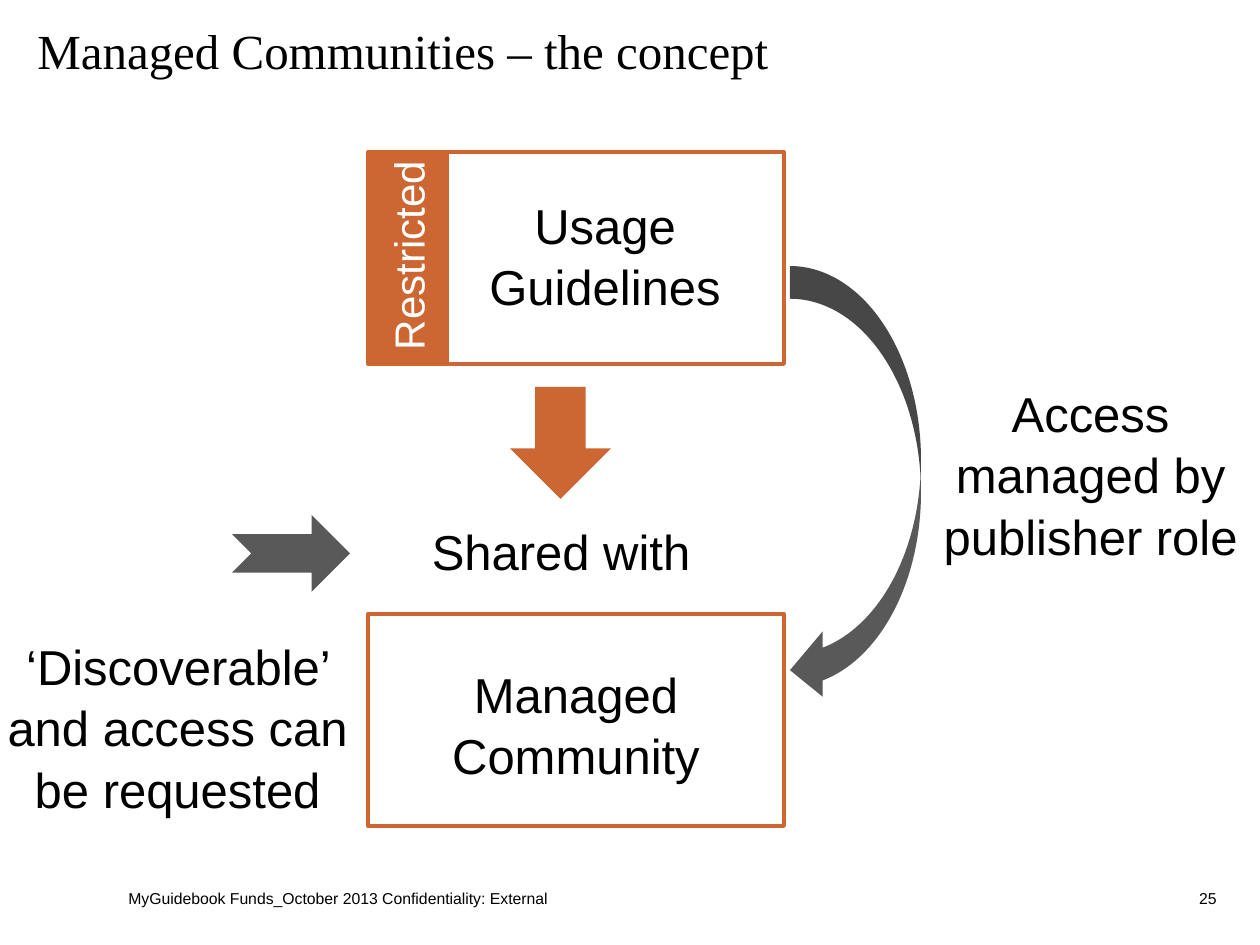
from dataclasses import dataclass

from pptx import Presentation
from pptx.dml.color import RGBColor as Rgb
from pptx.enum.shapes import MSO_SHAPE as Geo
from pptx.enum.text import MSO_ANCHOR as Anchor, PP_ALIGN as Align
from pptx.util import Emu, Pt

SCALE = 914400 / 126


@dataclass(frozen=True)
class Theme:
    ink: Rgb = Rgb(0, 0, 0)
    white: Rgb = Rgb(255, 255, 255)
    rust: Rgb = Rgb(0xCC, 0x66, 0x33)
    grey: Rgb = Rgb(0x59, 0x59, 0x59)
    sans: str = "Arial"
    serif: str = "Times New Roman"
    big: int = 28
    tab: int = 24
    small: int = 9
    edge: float = 2.25
    lead: float = 1.05


T = Theme()


def px(num):
    return Emu(round(num * SCALE))


def block(slide, geo, area, fill, edge=None):
    shape = slide.shapes.add_shape(geo, *map(px, area))
    shape.shadow.inherit = False
    shape.fill.solid()
    shape.fill.fore_color.rgb = fill
    if edge is None:
        shape.line.fill.background()
    else:
        shape.line.color.rgb = edge
        shape.line.width = Pt(T.edge)


def label(slide, text, area, size=T.big, color=T.ink, face=T.sans,
          align=Align.CENTER, anchor=Anchor.TOP, wrap=True, lead=T.lead, turn=0):
    box = slide.shapes.add_textbox(*map(px, area))
    box.rotation = turn
    frame = box.text_frame
    frame.word_wrap = wrap
    frame.vertical_anchor = anchor
    frame.text = text
    para = frame.paragraphs[0]
    para.alignment = align
    para.line_spacing = lead
    font = para.runs[0].font
    font.size, font.name = Pt(size), face
    font.color.rgb = color


def footer(slide, text, area, align):
    label(slide, text, area, size=T.small, align=align,
          anchor=Anchor.MIDDLE, lead=1.0)


def main():
    deck = Presentation()
    deck.slide_width, deck.slide_height = px(1260), px(945)
    slide = deck.slides.add_slide(deck.slide_layouts[6])

    label(slide, "Managed Communities – the concept", (25, 14, 1218, 77),
          face=T.serif, align=Align.LEFT, wrap=False, lead=1.0)

    for top in (152, 614):
        block(slide, Geo.RECTANGLE, (368, top, 416, 212), T.white, T.rust)
    block(slide, Geo.RECTANGLE, (369, 152, 80, 211), T.rust)
    label(slide, "Restricted", (297, 224, 217, 63), size=T.tab, color=T.white,
          wrap=False, turn=270)

    block(slide, Geo.DOWN_ARROW, (510, 387, 101, 112), T.rust)
    block(slide, Geo.NOTCHED_RIGHT_ARROW, (232, 515, 118, 77), T.grey)
    block(slide, Geo.CURVED_LEFT_ARROW, (790, 266, 131, 437), T.grey)

    label(slide, "Usage Guidelines", (459, 186, 292, 131))
    label(slide, "Shared with", (411, 512, 300, 72), wrap=False)
    label(slide, "Managed Community", (430, 655, 292, 131))
    label(slide, "‘Discoverable’ and access can be requested", (-9, 627, 373, 190))
    label(slide, "Access managed by publisher role", (924, 374, 333, 190))

    footer(slide, "MyGuidebook Funds_October 2013 Confidentiality: External",
           (116, 882, 782, 32), Align.LEFT)
    footer(slide, "25", (1124, 882, 105, 32), Align.RIGHT)

    deck.save("out.pptx")


if __name__ == "__main__":
    main()
